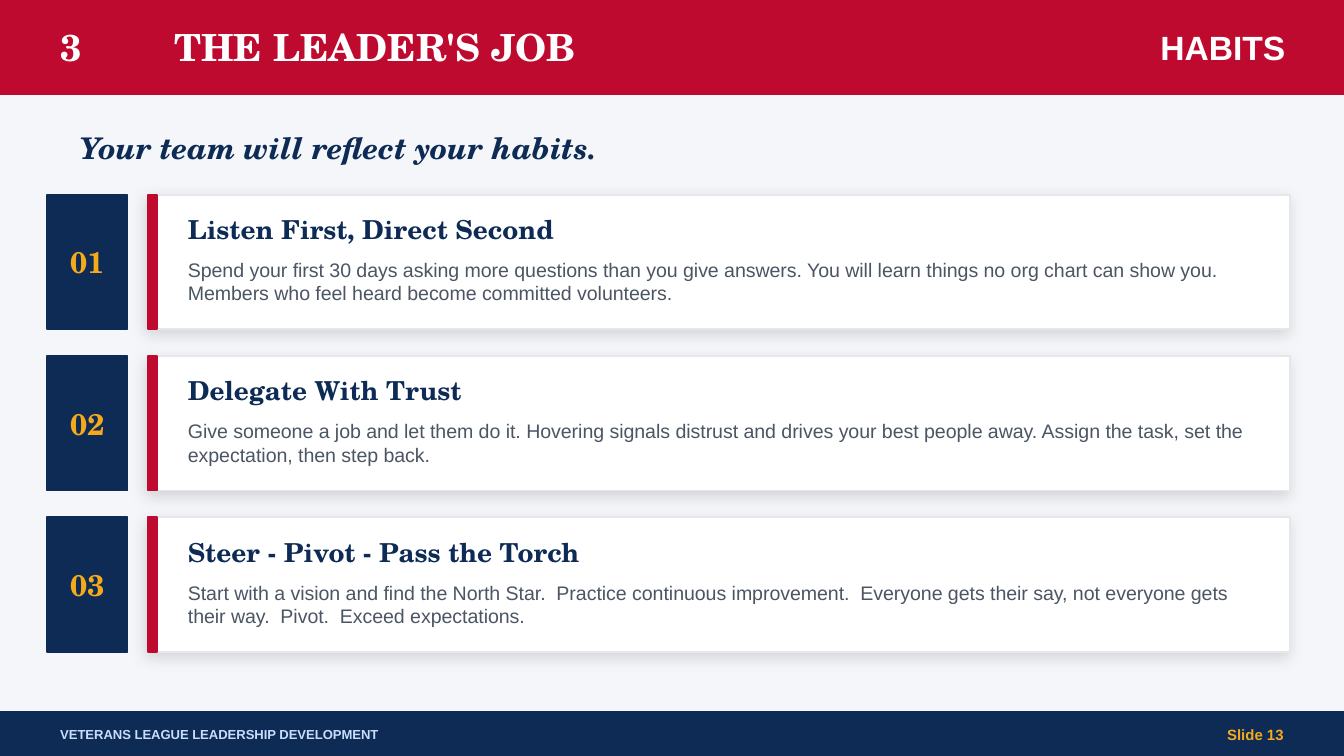
from dataclasses import dataclass

from lxml.etree import SubElement
from pptx import Presentation
from pptx.dml.color import RGBColor
from pptx.enum.shapes import MSO_SHAPE
from pptx.enum.text import MSO_ANCHOR, PP_ALIGN
from pptx.oxml.ns import qn
from pptx.util import Emu, Inches, Pt

COLORS = {
    "page": "F4F6F9", "red": "BF0A30", "navy": "0D2B55", "gold": "F5AA1C",
    "white": "FFFFFF", "border": "E5E7EB", "body": "4B5563",
    "pale": "CADCFC", "shadow": "000000",
}
SERIF, SANS = "TeX Gyre Schola", "Arial"

# The page is a grid of square cells, 100 columns wide
COLUMNS = 100
WIDTH = Inches(10)
HEIGHT = Emu(WIDTH * 9 // 16)
CELL = WIDTH // COLUMNS


@dataclass(frozen=True)
class Area:
    """A place on the page, in grid columns and rows."""
    column: float
    row: float
    columns: float
    rows: float

    def lengths(self) -> list[Emu]:
        return [Emu(round(cells * CELL))
                for cells in (self.column, self.row, self.columns, self.rows)]


@dataclass(frozen=True)
class Habit:
    title: str
    advice: str


HABITS = [
    Habit("Listen First, Direct Second",
          "Spend your first 30 days asking more questions than you give answers. "
          "You will learn things no org chart can show you. "
          "Members who feel heard become committed volunteers."),
    Habit("Delegate With Trust",
          "Give someone a job and let them do it. Hovering signals distrust and "
          "drives your best people away. Assign the task, set the expectation, "
          "then step back."),
    Habit("Steer - Pivot - Pass the Torch",
          "Start with a vision and find the North Star.  Practice continuous "
          "improvement.  Everyone gets their say, not everyone gets their way.  "
          "Pivot.  Exceed expectations."),
]
FIRST_ROW, ROW_PITCH, CARD_ROWS = 14.5, 12, 10


def rgb(name: str) -> RGBColor:
    return RGBColor.from_string(COLORS[name])


def add_block(page, area: Area, fill: str, line: str = ""):
    """Draw a filled rectangle; its outline matches the fill unless named."""
    block = page.shapes.add_shape(MSO_SHAPE.RECTANGLE, *area.lengths())
    block.shadow.inherit = False
    block.fill.solid()
    block.fill.fore_color.rgb = rgb(fill)
    block.line.color.rgb = rgb(line or fill)
    block.line.width = Pt(1)
    return block


def add_soft_shadow(block) -> None:
    effects = block._element.spPr.find(qn("a:effectLst"))
    shadow = SubElement(effects, qn("a:outerShdw"), blurRad=str(Pt(8)),
                        dist=str(Pt(3)), dir=str(135 * 60000),
                        algn="bl", rotWithShape="0")
    color = SubElement(shadow, qn("a:srgbClr"), val=COLORS["shadow"])
    SubElement(color, qn("a:alpha"), val="12000")


def add_text(page, area: Area, text: str, *, size: float, color: str,
             font: str = SERIF, bold: bool = True, italic: bool = False,
             align: PP_ALIGN = PP_ALIGN.LEFT,
             anchor: MSO_ANCHOR = MSO_ANCHOR.MIDDLE) -> None:
    frame = page.shapes.add_textbox(*area.lengths()).text_frame
    frame.word_wrap = True
    frame.vertical_anchor = anchor
    para = frame.paragraphs[0]
    para.alignment = align
    span = para.add_run()
    span.text = text
    span.font.name = font
    span.font.size = Pt(size)
    span.font.bold = bold
    span.font.italic = italic
    span.font.color.rgb = rgb(color)


def add_habit(page, number: int, habit: Habit) -> None:
    top = FIRST_ROW + (number - 1) * ROW_PITCH

    # Number tile
    tile = Area(3.5, top, 6, CARD_ROWS)
    add_block(page, tile, "navy")
    add_text(page, tile, f"{number:02d}", size=16, color="gold",
             align=PP_ALIGN.CENTER)

    # Card with accent edge
    card = add_block(page, Area(11, top, 85, CARD_ROWS), "white", "border")
    add_soft_shadow(card)
    add_block(page, Area(11, top, 0.7, CARD_ROWS), "red")

    # Card text
    add_text(page, Area(13, top + 0.8, 81, 3.5), habit.title,
             size=14, color="navy")
    add_text(page, Area(13, top + 4.2, 81, 5), habit.advice, size=10.5,
             color="body", font=SANS, bold=False, anchor=MSO_ANCHOR.TOP)


def main() -> None:
    deck = Presentation()
    deck.slide_width, deck.slide_height = WIDTH, HEIGHT
    page = deck.slides.add_slide(deck.slide_layouts[6])
    page.background.fill.solid()
    page.background.fill.fore_color.rgb = rgb("page")

    # Header band
    add_block(page, Area(0, 0, COLUMNS, 7), "red")
    add_text(page, Area(3.5, 0, 8, 7), "3", size=20, color="white")
    add_text(page, Area(12, 0, 70, 7), "THE LEADER'S JOB", size=20, color="white")
    add_text(page, Area(85, 0, 12, 7), "HABITS", size=18, color="white",
             font=SANS, align=PP_ALIGN.CENTER)

    # Key message
    add_text(page, Area(5, 8.5, 90, 5), "Your team will reflect your habits.",
             size=16, color="navy", italic=True)

    # Habit rows
    for number, habit in enumerate(HABITS, start=1):
        add_habit(page, number, habit)

    # Footer band
    add_block(page, Area(0, 53, COLUMNS, 3.3), "navy")
    add_text(page, Area(3.5, 53, 60, 3.3),
             "VETERANS LEAGUE LEADERSHIP DEVELOPMENT",
             size=7, color="pale", font=SANS)
    add_text(page, Area(75, 53, 21.5, 3.3), "Slide 13", size=8, color="gold",
             font=SANS, align=PP_ALIGN.RIGHT)

    deck.save("out.pptx")


if __name__ == "__main__":
    main()
